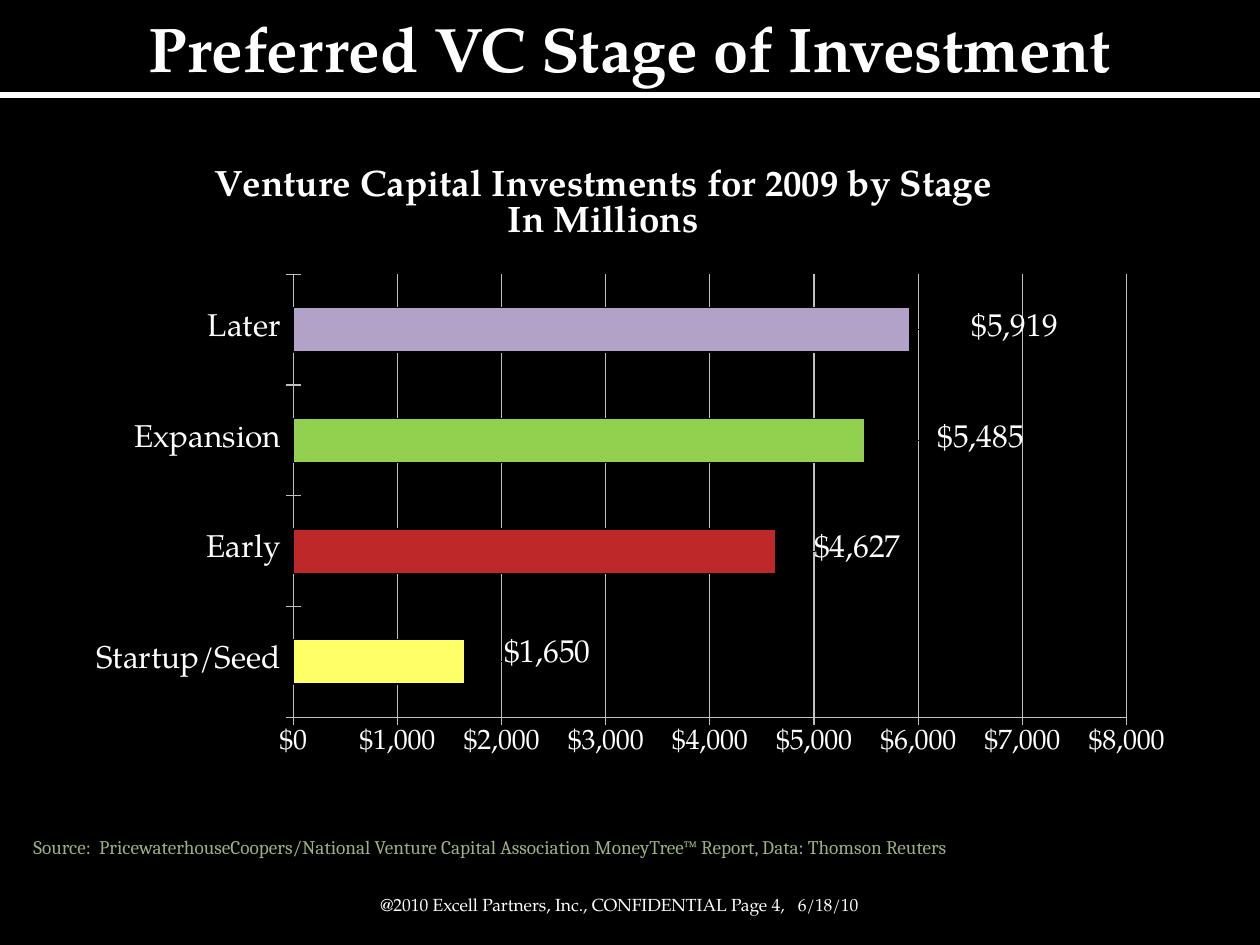
from lxml import etree
from pptx import Presentation
from pptx.chart.data import CategoryChartData
from pptx.dml.color import RGBColor
from pptx.enum.chart import XL_CHART_TYPE, XL_LABEL_POSITION, XL_TICK_MARK
from pptx.enum.shapes import MSO_CONNECTOR
from pptx.enum.text import MSO_ANCHOR, MSO_AUTO_SIZE, PP_ALIGN
from pptx.oxml import parse_xml
from pptx.oxml.ns import nsdecls, qn
from pptx.util import Emu, Pt

BAR = XL_CHART_TYPE.BAR_CLUSTERED
OUTSIDE = XL_LABEL_POSITION.OUTSIDE_END
CROSS = XL_TICK_MARK.CROSS
CENTER = PP_ALIGN.CENTER
MIDDLE = MSO_ANCHOR.MIDDLE

# Content
TITLE = "Preferred VC Stage of Investment"
CHART_TITLE = "Venture Capital Investments for 2009 by Stage\nIn Millions"
SOURCE = ("Source:  PricewaterhouseCoopers/National Venture Capital Association "
          "MoneyTree™ Report, Data: Thomson Reuters")
FOOTER = "@2010 Excell Partners, Inc., CONFIDENTIAL Page 4,   6/18/10"
DOLLARS = '"$"#,##0'
STAGES = [  # name, millions, bar colour, label shift as a share of the chart
    ("Startup/Seed", 1650, "FFFF66", (0.03, -0.01)),
    ("Early", 4627, "BE2828", (0.03, 0)),
    ("Expansion", 5485, "92D050", (0.06, 0)),
    ("Later", 5919, "B3A2C7", (0.05, 0)),
]

SERIF = "TeX Gyre Pagella"
WHITE, BLACK, GRID, GREEN = "FFFFFF", "000000", "C0C0C0", "9CB084"
PX = 914400 // 126


def px(*lengths):
    return [Emu(length * PX) for length in lengths]


def color(value):
    return RGBColor.from_string(value)


def style(font, size, value=WHITE, name=SERIF, bold=False):
    font.size, font.name, font.bold = Pt(size), name, bold
    font.color.rgb = color(value)


def set_line(line, value, width):
    line.color.rgb = color(value)
    line.width = Pt(width)


def manual_layout(x, y, extra=""):
    return parse_xml(
        f'<c:layout {nsdecls("c")}><c:manualLayout>{extra}'
        f'<c:x val="{x}"/><c:y val="{y}"/></c:manualLayout></c:layout>')


def add_text(slide, text, frame, size, value, name):
    box = slide.shapes.add_textbox(*px(*frame))
    box.text_frame.word_wrap = True
    box.text_frame.text = text
    style(box.text_frame.paragraphs[0].runs[0].font, size, value, name)


deck = Presentation()
deck.slide_width, deck.slide_height = px(1260, 945)
slide = deck.slides.add_slide(deck.slide_layouts[5])
slide.background.fill.solid()
slide.background.fill.fore_color.rgb = color(BLACK)

# Title and the rule below it
title = slide.shapes.title
title.left, title.top, title.width, title.height = px(0, 0, 1260, 95)
title.text_frame.text = TITLE
title.text_frame.auto_size = MSO_AUTO_SIZE.NONE
title.text_frame.vertical_anchor = MIDDLE
title.text_frame.paragraphs[0].alignment = CENTER
style(title.text_frame.paragraphs[0].runs[0].font, 36, bold=True)

rule = slide.shapes.add_connector(MSO_CONNECTOR.STRAIGHT, *px(0, 95, 1260, 95))
set_line(rule.line, WHITE, 3)
etree.SubElement(rule._element.spPr, qn("a:effectLst"))

# Source and footer
add_text(slide, SOURCE, (21, 829, 961, 37), 11, GREEN, "Cambria")
add_text(slide, FOOTER, (368, 888, 525, 29), 10, WHITE, SERIF)

# Chart
data = CategoryChartData(number_format=DOLLARS)
data.categories = [stage[0] for stage in STAGES]
data.add_series("Series 1", [stage[1] for stage in STAGES])
chart = slide.shapes.add_chart(BAR, *px(63, 158, 1134, 640), data).chart
style(chart.font, 18)
chart.has_legend = False
chart.has_title = True
chart.chart_title.text_frame.text = CHART_TITLE
for para in chart.chart_title.text_frame.paragraphs:
    style(para.runs[0].font, 21, bold=True)
chart.chart_title.include_in_layout = False
chart_title = chart.chart_title._element
for old in chart_title.findall(qn("c:layout")):
    chart_title.remove(old)
chart_title.find(qn("c:tx")).addnext(manual_layout(
    0.13, 0.01, '<c:xMode val="edge"/><c:yMode val="edge"/>'))

# Plot area
plot_area = chart._chartSpace.chart.plotArea
for old in plot_area.findall(qn("c:layout")):
    plot_area.remove(old)
plot_layout = manual_layout(
    0.203, 0.182,
    '<c:layoutTarget val="inner"/><c:xMode val="edge"/><c:yMode val="edge"/>')
for tag, share in (("c:w", 0.735), ("c:h", 0.692)):
    etree.SubElement(plot_layout[0], qn(tag), val=str(share))
plot_area.insert(0, plot_layout)

# Axes
for axis, size in ((chart.category_axis, 18), (chart.value_axis, 16)):
    axis.major_tick_mark = CROSS
    set_line(axis.format.line, GRID, 0.75)
    style(axis.tick_labels.font, size)
value_axis = chart.value_axis
value_axis.minimum_scale, value_axis.maximum_scale = 0, 8000
value_axis.major_unit = 1000
value_axis.tick_labels.number_format = DOLLARS
value_axis.tick_labels.number_format_is_linked = False
set_line(value_axis.major_gridlines.format.line, GRID, 0.75)

# Bars and their shifted labels
plot = chart.plots[0]
plot.gap_width = 150
plot.vary_by_categories = False
series = plot.series[0]
labels = series.data_labels
labels.show_value = True
labels.number_format = DOLLARS
labels.number_format_is_linked = False
labels.position = OUTSIDE
style(labels.font, 18)
for index, (_, _, fill, shift) in enumerate(STAGES):
    point = series.points[index]
    point.format.fill.solid()
    point.format.fill.fore_color.rgb = color(fill)
    set_line(point.format.line, BLACK, 0.75)
    style(point.data_label.font, 18)
    point.data_label.position = OUTSIDE
for label, stage in zip(labels._element.findall(qn("c:dLbl")), STAGES):
    label.find(qn("c:idx")).addnext(manual_layout(*stage[3]))

deck.save("out.pptx")
